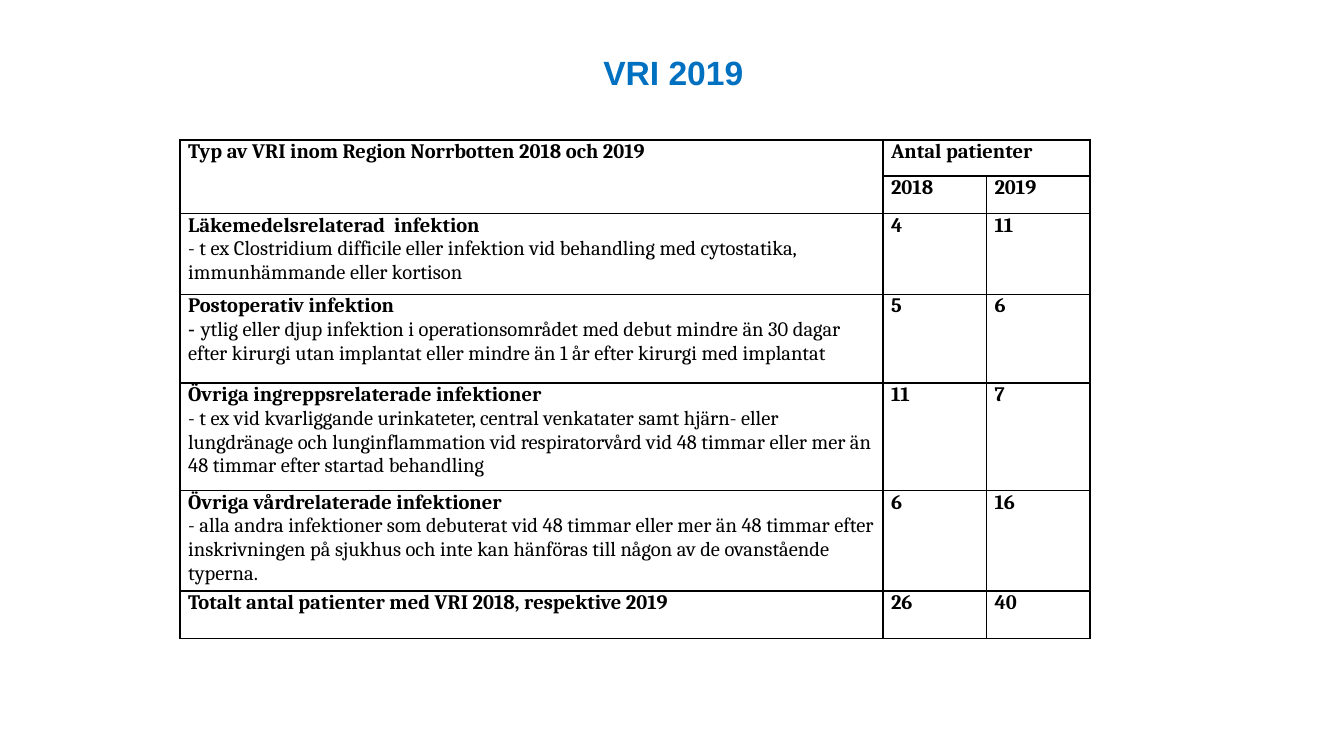
from typing import NamedTuple

from lxml.etree import SubElement
from pptx import Presentation
from pptx.dml.color import RGBColor
from pptx.enum.text import MSO_ANCHOR, PP_ALIGN
from pptx.oxml.ns import qn
from pptx.util import Inches, Pt

COLORS = {"title": "0070C0", "text": "000000", "border": "000000"}
COL_WIDTHS = [5.23, 0.77, 0.77]
ROW_HEIGHTS = [0.27, 0.28, 0.6, 0.66, 0.8, 0.75, 0.35]


class Infection(NamedTuple):
    name: str
    detail: str
    y2018: str
    y2019: str
    dash_font: str = "Cambria"


INFECTIONS = [
    Infection("Läkemedelsrelaterad  infektion",
              "t ex Clostridium difficile eller infektion vid behandling med "
              "cytostatika, immunhämmande eller kortison", "4", "11"),
    Infection("Postoperativ infektion ",
              "ytlig eller djup infektion i operationsområdet med debut mindre "
              "än 30 dagar efter kirurgi utan implantat eller mindre än 1 år "
              "efter kirurgi med implantat", "5", "6", "Arial"),
    Infection("Övriga ingreppsrelaterade infektioner",
              "t ex vid kvarliggande urinkateter, central venkatater samt "
              "hjärn- eller lungdränage och lunginflammation vid "
              "respiratorvård vid 48 timmar eller mer än 48 timmar efter "
              "startad behandling", "11", "7"),
    Infection("Övriga vårdrelaterade infektioner",
              "alla andra infektioner som debuterat vid 48 timmar eller mer än "
              "48 timmar efter inskrivningen på sjukhus och inte kan hänföras "
              "till någon av de ovanstående typerna.", "6", "16"),
    Infection("Totalt antal patienter med VRI 2018, respektive 2019",
              "", "26", "40"),
]


def set_font(font, name: str, size: float, color: str, bold: bool = True) -> None:
    font.name, font.size, font.bold = name, Pt(size), bold
    font.color.rgb = RGBColor.from_string(COLORS[color])


def add_title(s, text: str) -> None:
    tf = s.shapes.add_textbox(Inches(1.74), Inches(0.42),
                              Inches(6.54), Inches(0.31)).text_frame
    tf.word_wrap = True
    tf.vertical_anchor = MSO_ANCHOR.BOTTOM
    tf.margin_left = tf.margin_right = Inches(0.07)
    tf.margin_top = tf.margin_bottom = Inches(0.04)
    p = tf.paragraphs[0]
    p.text, p.alignment = text, PP_ALIGN.CENTER
    set_font(p.font, "Arial", 18, "title")


def style_cell(cell) -> None:
    cell.margin_left = cell.margin_right = Inches(0.06)
    cell.margin_top = cell.margin_bottom = Inches(0)
    tc_pr = cell._tc.get_or_add_tcPr()
    for side in ("lnL", "lnR", "lnT", "lnB"):
        ln = SubElement(tc_pr, qn(f"a:{side}"), w=str(Pt(1)))
        fill = SubElement(ln, qn("a:solidFill"))
        SubElement(fill, qn("a:srgbClr"), val=COLORS["border"])
    cell.fill.background()
    p = cell.text_frame.paragraphs[0]
    p.space_after = Pt(3)
    set_font(p.font, "Cambria", 11, "text")


def add_infection(table, row: int, item: Infection) -> None:
    for col, text in enumerate((item.name, item.y2018, item.y2019)):
        table.cell(row, col).text = text
    if item.detail:
        p = table.cell(row, 0).text_frame.paragraphs[0]
        p.add_line_break()
        for text, name in (("- ", item.dash_font), (item.detail, "Cambria")):
            r = p.add_run()
            r.text, r.font.name, r.font.bold = text, name, False


def add_infection_table(s) -> None:
    table = s.shapes.add_table(
        len(ROW_HEIGHTS), len(COL_WIDTHS), Inches(1.34), Inches(1.04),
        Inches(sum(COL_WIDTHS)), Inches(sum(ROW_HEIGHTS))).table
    table.first_row = table.horz_banding = False
    for column, width in zip(table.columns, COL_WIDTHS):
        column.width = Inches(width)
    for row, height in zip(table.rows, ROW_HEIGHTS):
        row.height = Inches(height)
    table.cell(0, 0).merge(table.cell(1, 0))
    table.cell(0, 1).merge(table.cell(0, 2))
    table.cell(0, 0).text = "Typ av VRI inom Region Norrbotten 2018 och 2019"
    table.cell(0, 1).text = "Antal patienter"
    table.cell(1, 1).text = "2018"
    table.cell(1, 2).text = "2019"
    for row, item in enumerate(INFECTIONS, start=2):
        add_infection(table, row, item)
    for cell in table.iter_cells():
        style_cell(cell)


def main() -> None:
    prs = Presentation()
    prs.slide_width = Inches(10)
    prs.slide_height = Inches(10 * 9 / 16)
    s = prs.slides.add_slide(prs.slide_layouts[6])
    add_title(s, "VRI 2019")
    add_infection_table(s)
    prs.save("out.pptx")


if __name__ == "__main__":
    main()
